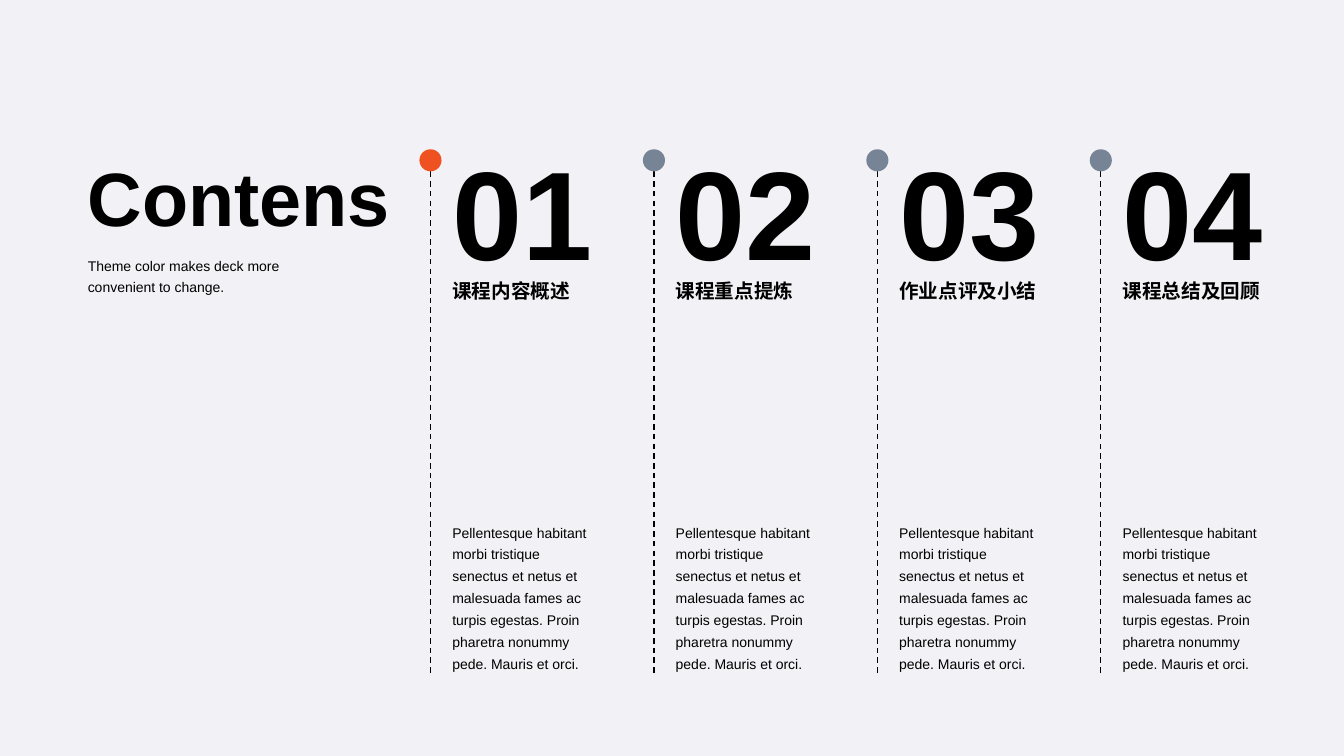
from lxml import etree
from pptx import Presentation
from pptx import util as u
from pptx.dml.color import RGBColor
from pptx.enum import dml, shapes, text
from pptx.oxml.ns import qn

COLORS = {
    "background": "F2F1F5",
    "ink": "000000",
    "active": "EF5121",
    "inactive": "778495",
}
FONT = "Arial"
CHAPTERS = ["课程内容概述", "课程重点提炼", "作业点评及小结", "课程总结及回顾"]
DESCRIPTION = (
    "Pellentesque habitant morbi tristique senectus et netus et malesuada "
    "fames ac turpis egestas. Proin pharetra nonummy pede. Mauris et orci."
)
FIRST_LEFT, COLUMN_PITCH = 299.6, 159.6
COLUMN_TOP, COLUMN_WIDTH, COLUMN_HEIGHT = 106.6, 151, 376.6
DOT = 15.8


def rgb(name):
    return RGBColor.from_string(COLORS[name])


def place(shape, left, top, width, height):
    shape.left, shape.top = u.Pt(left), u.Pt(top)
    shape.width, shape.height = u.Pt(width), u.Pt(height)


def write(shape, content, size, bold=False, line_spacing=1.0,
          anchor=text.MSO_ANCHOR.TOP):
    frame = shape.text_frame
    frame.word_wrap = True
    frame.auto_size = text.MSO_AUTO_SIZE.NONE
    frame.vertical_anchor = anchor
    paragraph = frame.paragraphs[0]
    paragraph.alignment = text.PP_ALIGN.LEFT
    paragraph.space_before = u.Pt(0)
    paragraph.line_spacing = line_spacing
    run = paragraph.add_run()
    run.text = content
    run.font.name = FONT
    run.font.size = u.Pt(size)
    run.font.bold = bold
    run.font.color.rgb = rgb("ink")


def add_text(slide, left, top, width, height, content, size, **style):
    box = slide.shapes.add_textbox(
        u.Pt(left), u.Pt(top), u.Pt(width), u.Pt(height))
    write(box, content, size, **style)


def add_heading(slide, left, top, width):
    title, subtitle = slide.placeholders
    place(title, left, top, width, 72.7)
    write(title, "Contens", 54, bold=True, anchor=text.MSO_ANCHOR.BOTTOM)
    place(subtitle, left, top + 72.7, 157, 37.5)
    write(subtitle, "Theme color makes deck more convenient to change.", 10,
          line_spacing=1.3)


def add_marker(slide, left, top, height, color):
    """Draw a dot with a dashed line hanging from it."""
    center = u.Pt(left + DOT / 2)
    line = slide.shapes.add_connector(
        shapes.MSO_CONNECTOR.STRAIGHT,
        center, u.Pt(top + DOT), center, u.Pt(top + height))
    line.line.color.rgb = rgb("ink")
    line.line.width = u.Pt(1)
    line.line.dash_style = dml.MSO_LINE.DASH
    etree.SubElement(line._element.spPr, qn("a:effectLst"))

    dot = slide.shapes.add_shape(
        shapes.MSO_SHAPE.OVAL, u.Pt(left), u.Pt(top), u.Pt(DOT), u.Pt(DOT))
    dot.shadow.inherit = False
    dot.fill.solid()
    dot.fill.fore_color.rgb = rgb(color)
    dot.line.fill.background()


def add_chapter(slide, left, top, width, height, number, name):
    add_marker(slide, left, top, height,
               "active" if number == 1 else "inactive")
    text_left = left + DOT + 0.6
    add_text(slide, text_left, top + 90.7, width, 22.3, name, 14,
             bold=True, line_spacing=u.Pt(15))
    add_text(slide, text_left, top - 14.4, 134.6, 116.6, f"{number:02}", 90,
             bold=True)
    add_text(slide, text_left, top + height - 116, 118.8, 116, DESCRIPTION,
             10, line_spacing=1.3)


def add_contents_slide(presentation):
    slide = presentation.slides.add_slide(presentation.slide_layouts[0])
    slide.background.fill.solid()
    slide.background.fill.fore_color.rgb = rgb("background")
    add_heading(slide, 55.5, 103.7, 236.2)
    for index, name in enumerate(CHAPTERS):
        add_chapter(slide, FIRST_LEFT + index * COLUMN_PITCH, COLUMN_TOP,
                    COLUMN_WIDTH, COLUMN_HEIGHT, index + 1, name)


def main():
    presentation = Presentation()
    presentation.slide_width = u.Pt(960)
    presentation.slide_height = u.Pt(540)
    add_contents_slide(presentation)
    presentation.save("out.pptx")


if __name__ == "__main__":
    main()
